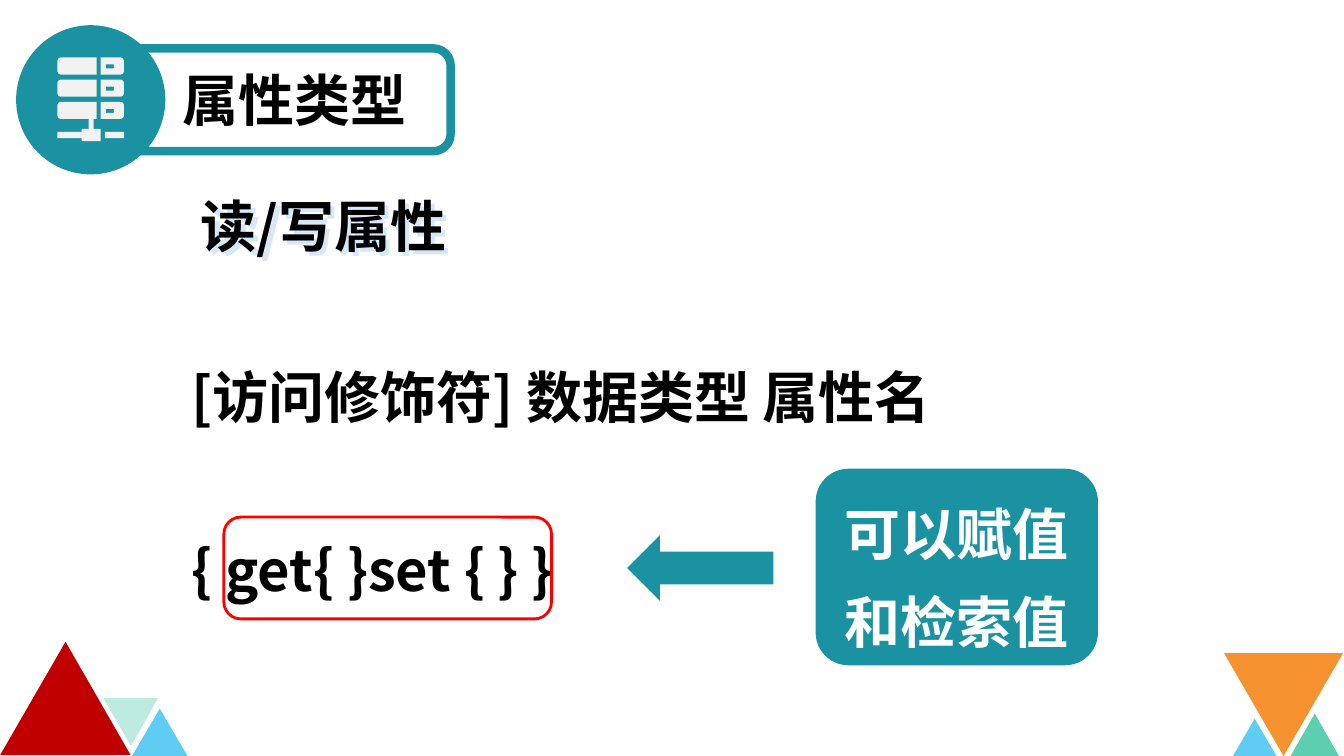
from dataclasses import dataclass

import pptx
import pptx.dml.color
import pptx.enum.shapes
import pptx.enum.text
import pptx.oxml
import pptx.oxml.ns
import pptx.util
from pptx.util import Inches

SHAPE = pptx.enum.shapes.MSO_SHAPE
ALIGN = pptx.enum.text.PP_ALIGN


@dataclass(frozen=True)
class Theme:
    font: str = "Noto Sans CJK SC"
    size: int = 40
    teal: str = "1A92A2"
    icon: str = "F2F2F2"
    ink: str = "000000"
    white: str = "FFFFFF"
    frame: str = "FF0000"
    glow: str = "D6E8F8"
    red: str = "C00000"
    sky: str = "5ECCF3"
    mint: str = "BEEBDF"
    green: str = "5DCEAF"
    orange: str = "F69230"


THEME = Theme()


def rgb(value):
    return pptx.dml.color.RGBColor.from_string(value)


def paint(shape, fill=None, line=None, width=0):
    shape.shadow.inherit = False
    if fill:
        shape.fill.solid()
        shape.fill.fore_color.rgb = rgb(fill)
    else:
        shape.fill.background()
    if line:
        shape.line.color.rgb = rgb(line)
        shape.line.width = pptx.util.Pt(width)
    else:
        shape.line.fill.background()


def add_shape(page, kind, place, rotation=0, **style):
    shape = page.shapes.add_shape(kind, *map(Inches, place))
    shape.rotation = rotation
    paint(shape, **style)
    return shape


def add_span(para, text, color):
    span = para.add_run()
    span.text = text
    span.font.size = pptx.util.Pt(THEME.size)
    span.font.bold = True
    span.font.name = THEME.font
    span.font.color.rgb = rgb(color)
    latin = span.font._element.find(pptx.oxml.ns.qn("a:latin"))
    latin.addnext(pptx.oxml.parse_xml(
        f'<a:ea {pptx.oxml.ns.nsdecls("a")} typeface="{THEME.font}"/>'))


def write(shape, lines, color=THEME.ink, align=ALIGN.LEFT, spacing=1.0, gap=0):
    """Fill a shape with one paragraph per line, gap points apart."""
    frame = shape.text_frame
    for index, text in enumerate(lines):
        para = frame.add_paragraph() if index else frame.paragraphs[0]
        para.alignment = align
        para.line_spacing = spacing
        if index and gap:
            para.space_before = pptx.util.Pt(gap)
        add_span(para, text, color)


def add_text(page, place, lines, wrap=True, **style):
    box = page.shapes.add_textbox(*map(Inches, place))
    box.text_frame.word_wrap = wrap
    box.text_frame.auto_size = pptx.enum.text.MSO_AUTO_SIZE.SHAPE_TO_FIT_TEXT
    write(box, lines, **style)
    return box


def add_text_shadow(box, color):
    box._element.spPr.append(pptx.oxml.parse_xml(
        f'<a:effectLst {pptx.oxml.ns.nsdecls("a")}>'
        f'<a:outerShdw dist="{Inches(0.06)}" dir="2700000" algn="tl" rotWithShape="0">'
        f'<a:srgbClr val="{color}"/></a:outerShdw></a:effectLst>'))


def add_server_icon(page):
    """Three server units above a network plug, in hundredths of an inch."""
    contours = []
    for top in (57, 79, 101):
        bottom = top + 17
        contours += [
            [(60, top), (96, top), (96, bottom), (60, bottom), (58, bottom - 1),
             (57, bottom - 3), (57, top + 3), (58, top + 1)],
            [(100, top), (100, bottom), (120, bottom), (122, bottom - 1),
             (123, bottom - 3), (123, top + 3), (122, top + 1), (120, top)],
            [(105, top + 7), (113, top + 7), (113, top + 11), (105, top + 11)],
        ]
    contours += [
        [(88, 118), (93, 118), (93, 128), (100, 128), (100, 140), (81, 140),
         (81, 137), (57, 137), (57, 131), (81, 131), (81, 128), (88, 128)],
        [(104, 131), (123, 131), (123, 137), (104, 137)],
    ]
    first, *others = contours
    builder = page.shapes.build_freeform(*first[0], scale=Inches(0.01))
    builder.add_line_segments(first[1:], close=True)
    for contour in others:
        builder.move_to(*contour[0])
        builder.add_line_segments(contour[1:], close=True)
    paint(builder.convert_to_shape(), fill=THEME.icon)


def add_triangles(page, triangles):
    for place, rotation, color in triangles:
        add_shape(page, SHAPE.ISOSCELES_TRIANGLE, place, rotation, fill=color)


def add_header(page):
    add_shape(page, SHAPE.ROUNDED_RECTANGLE, (1.23, 0.48, 3.24, 1.02),
              line=THEME.teal, width=6)
    add_shape(page, SHAPE.OVAL, (0.16, 0.25, 1.48, 1.48), fill=THEME.teal)
    add_server_icon(page)
    add_text(page, (1.71, 0.6, 2.42, 0.77), ["属性类型"], wrap=False)


def add_syntax(page):
    syntax = add_text(page, (1.71, 3.21, 8.58, 2.83),
                      ["[访问修饰符] 数据类型 属性名", "{ get{ }set { } }"],
                      align=ALIGN.JUSTIFY, spacing=1.5, gap=52)
    syntax.text_frame.margin_left = Inches(0.19)
    heading = add_text(page, (1.71, 1.85, 3, 0.77), ["读/写属性"], align=ALIGN.CENTER)
    add_text_shadow(heading, THEME.glow)


def add_callout(page):
    add_shape(page, SHAPE.ROUNDED_RECTANGLE, (2.22, 5.13, 3.25, 1.01),
              line=THEME.frame, width=2)
    add_shape(page, SHAPE.LEFT_ARROW, (6.22, 5.31, 1.45, 0.65), fill=THEME.teal)
    callout = add_shape(page, SHAPE.ROUNDED_RECTANGLE, (8.09, 4.65, 2.8, 1.95),
                        fill=THEME.teal)
    callout.text_frame.word_wrap = True
    callout.text_frame.vertical_anchor = pptx.enum.text.MSO_ANCHOR.MIDDLE
    write(callout, ["可以赋值和检索值"], THEME.white, ALIGN.CENTER, 1.3)


def main():
    deck = pptx.Presentation()
    deck.slide_width, deck.slide_height = Inches(13.33), Inches(7.5)
    page = deck.slides.add_slide(deck.slide_layouts[6])
    add_triangles(page, [
        ((1.31, 7.03, 0.55, 0.47), 0, THEME.sky),
        ((1.09, 6.81, 0.55, 0.47), 60, THEME.mint),
        ((0.16, 6.65, 1.3, 1.12), 120, THEME.red),
    ])
    add_header(page)
    add_triangles(page, [
        ((12.8, 7.08, 0.48, 0.42), 0, THEME.green),
        ((12.14, 6.48, 1.18, 1.02), 180, THEME.orange),
        ((12.23, 7.13, 0.43, 0.37), 0, THEME.sky),
    ])
    add_syntax(page)
    add_callout(page)
    deck.save("out.pptx")


if __name__ == "__main__":
    main()
